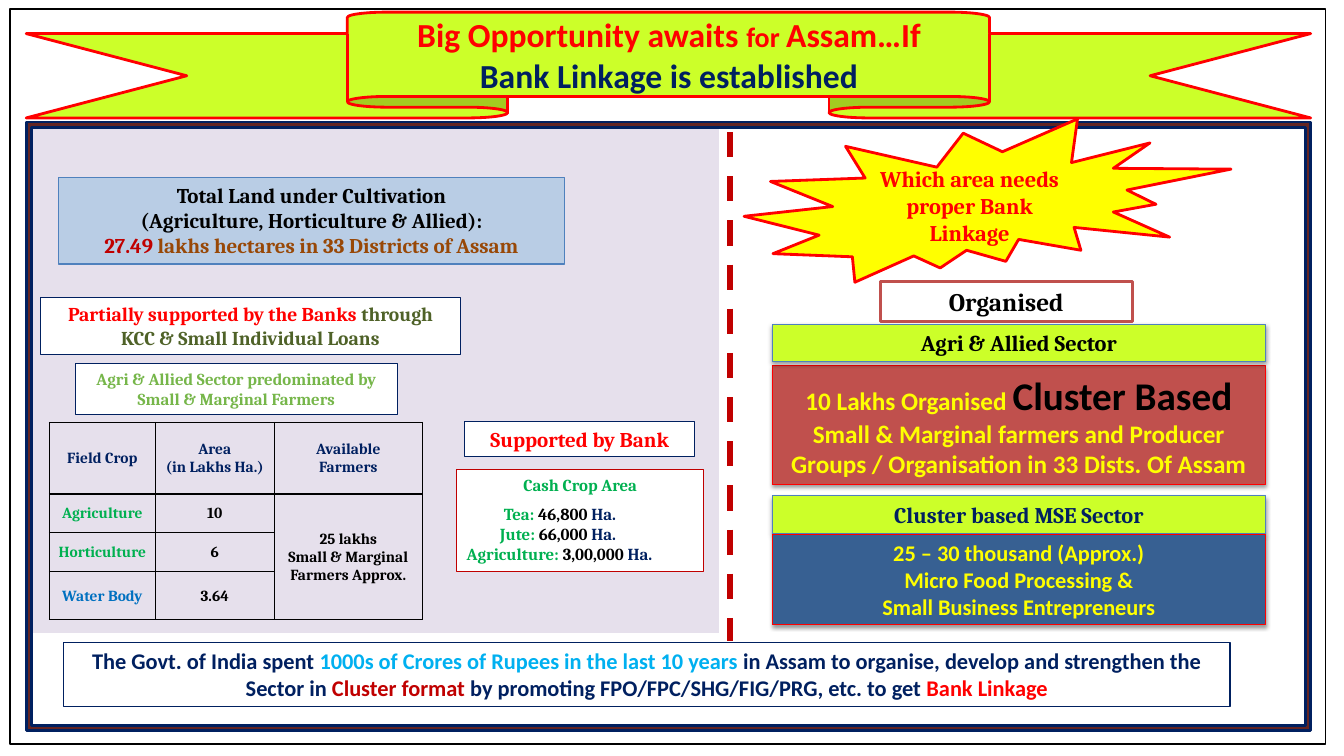
"""Build the slide on bank linkage for farming clusters in Assam."""
from typing import NamedTuple, Optional

from lxml import etree
from pptx import Presentation
from pptx import util as u
from pptx.dml.color import RGBColor
from pptx.enum import dml, shapes, text
from pptx.oxml import ns

BLACK = RGBColor(0x00, 0x00, 0x00)
WHITE = RGBColor(0xFF, 0xFF, 0xFF)
NAVY = RGBColor(0x00, 0x20, 0x60)
RED = RGBColor(0xFF, 0x00, 0x00)
DARK_RED = RGBColor(0xC0, 0x00, 0x00)
BRICK = RGBColor(0xC0, 0x50, 0x4D)
MAROON = RGBColor(0x63, 0x25, 0x23)
BROWN = RGBColor(0x98, 0x48, 0x07)
YELLOW = RGBColor(0xFF, 0xFF, 0x00)
LIME = RGBColor(0xCC, 0xFF, 0x29)
GREEN = RGBColor(0x00, 0xB0, 0x50)
LEAF = RGBColor(0x76, 0xB6, 0x4A)
OLIVE = RGBColor(0x4F, 0x62, 0x28)
LAVENDER = RGBColor(0xE6, 0xE0, 0xEC)
PALE_BLUE = RGBColor(0xB9, 0xCD, 0xE5)
BLUE = RGBColor(0x4F, 0x81, 0xBD)
STEEL = RGBColor(0x37, 0x60, 0x92)
SKY = RGBColor(0x00, 0xB0, 0xF0)
WATER = RGBColor(0x00, 0x70, 0xC0)
CALIBRI, CAMBRIA = "Calibri", "Cambria"
MIDDLE, TOP = text.MSO_ANCHOR.MIDDLE, text.MSO_ANCHOR.TOP
KIND = shapes.MSO_SHAPE


class Span(NamedTuple):
    words: str
    color: RGBColor
    size: Optional[float] = None


class Line(NamedTuple):
    spans: tuple[Span, ...]
    indent: Optional[float] = None
    before: float = 0


class Panel(NamedTuple):
    at: tuple[float, float, float, float]
    fill: Optional[RGBColor] = None
    edge: Optional[RGBColor] = None
    weight: float = 0.75
    lines: tuple[Line, ...] = ()
    size: float = 16
    face: str = CAMBRIA
    raised: bool = False
    kind: KIND = KIND.RECTANGLE
    adjust: tuple[float, ...] = ()


def plain(color: RGBColor, *rows: str) -> tuple[Line, ...]:
    """Return one single-coloured line per row."""
    return tuple(Line((Span(row, color),)) for row in rows)


def crop(name: str, area: str, indent: float, before: float = 0) -> Line:
    """Return a left-aligned line for one cash crop."""
    return Line((Span(name + ": ", GREEN), Span(area + " ", BLACK), Span("Ha.", NAVY)), indent, before)


def apply(target: object, values: dict) -> None:
    """Set each named attribute on the target."""
    for name, value in values.items():
        setattr(target, name, value)


def write(frame, lines: tuple[Line, ...], size: float, face: str) -> None:
    """Fill a text frame with formatted lines."""
    for number, line in enumerate(lines):
        paragraph = frame.add_paragraph() if number else frame.paragraphs[0]
        paragraph.alignment = text.PP_ALIGN.CENTER
        if line.indent is not None:
            paragraph.alignment = text.PP_ALIGN.LEFT
            paragraph._p.get_or_add_pPr().set("marL", str(u.Inches(line.indent)))
        if line.before:
            paragraph.space_before = u.Pt(line.before)
        for span in line.spans:
            run = paragraph.add_run()
            run.text = span.words
            apply(run.font, {"name": face, "size": u.Pt(span.size or size), "bold": True})
            run.font.color.rgb = span.color


def draw_panel(slide, panel: Panel):
    """Draw one panel with its text and return it."""
    shape = slide.shapes.add_shape(panel.kind, *map(u.Inches, panel.at))
    shape.shadow.inherit = False
    for index, value in enumerate(panel.adjust):
        shape.adjustments[index] = value
    if panel.fill is None:
        shape.fill.background()
    else:
        shape.fill.solid()
        shape.fill.fore_color.rgb = panel.fill
    if panel.edge is None:
        shape.line.fill.background()
    else:
        shape.line.color.rgb = panel.edge
        shape.line.width = u.Pt(panel.weight)
    if panel.raised:
        effects = shape.element.spPr.find(ns.qn("a:effectLst"))
        shadow = etree.SubElement(effects, ns.qn("a:outerShdw"), blurRad=str(u.Pt(3.1)),
                                  dist=str(u.Pt(1.6)), dir="5400000", rotWithShape="0")
        tint = etree.SubElement(shadow, ns.qn("a:srgbClr"), val="000000")
        etree.SubElement(tint, ns.qn("a:alpha"), val="38000")
    if panel.lines:
        boxed = panel.kind == KIND.RECTANGLE
        fit = text.MSO_AUTO_SIZE.SHAPE_TO_FIT_TEXT if boxed else text.MSO_AUTO_SIZE.NONE
        apply(shape.text_frame, {"word_wrap": True, "auto_size": fit,
                                 "vertical_anchor": TOP if boxed else MIDDLE,
                                 "margin_top": u.Inches(0.05 if boxed else 0.1)})
        write(shape.text_frame, panel.lines, panel.size, panel.face)
    return shape


def draw_title(slide, ribbon) -> None:
    """Set the title on the front of the ribbon."""
    title = slide.shapes.title
    ribbon.element.addnext(title.element)
    apply(title, dict(zip(("left", "top", "width", "height"), map(u.Inches, (3.45, 0.12, 6.37, 0.84)))))
    apply(title.text_frame, {"word_wrap": True, "vertical_anchor": MIDDLE,
                             "auto_size": text.MSO_AUTO_SIZE.NONE})
    heading = Line((Span("Big Opportunity awaits ", RED), Span("for ", RED, 20), Span("Assam…If", RED)))
    write(title.text_frame, (heading, *plain(NAVY, "Bank Linkage is established")), 24, CALIBRI)


def draw_crops(slide) -> None:
    """Draw the table of field crops."""
    rows = (
        (plain(NAVY, "Field Crop"), plain(NAVY, "Area", "(in Lakhs Ha.)"), plain(NAVY, "Available", "Farmers")),
        (plain(GREEN, "Agriculture"), plain(BLACK, "10"),
         plain(BLACK, "25 lakhs", "Small & Marginal", "Farmers Approx.")),
        (plain(GREEN, "Horticulture"), plain(BLACK, "6"), ()),
        (plain(WATER, "Water Body"), plain(BLACK, "3.64"), ()),
    )
    crops = slide.shapes.add_table(4, 3, *map(u.Inches, (0.49, 4.19, 3.7, 1.96))).table
    for column, width in zip(crops.columns, (1.05, 1.18, 1.47)):
        column.width = u.Inches(width)
    for row, height in zip(crops.rows, (0.71, 0.38, 0.39, 0.48)):
        row.height = u.Inches(height)
    crops.cell(1, 2).merge(crops.cell(3, 2))
    for r, row in enumerate(rows):
        for c, lines in enumerate(row):
            cell = crops.cell(r, c)
            side = u.Inches(0.01)
            apply(cell, {"vertical_anchor": MIDDLE, "margin_left": side, "margin_right": side,
                         "margin_top": side, "margin_bottom": 0})
            write(cell.text_frame, lines, 11, CAMBRIA)
            properties = cell._tc.get_or_add_tcPr()
            for edge in ("a:lnL", "a:lnR", "a:lnT", "a:lnB"):
                border = etree.SubElement(properties, ns.qn(edge), w=str(u.Pt(1)))
                paint = etree.SubElement(border, ns.qn("a:solidFill"))
                etree.SubElement(paint, ns.qn("a:srgbClr"), val="000000")
            cell.fill.background()


def draw_divider(slide) -> None:
    """Draw the dashed line between the two halves."""
    x = u.Inches(7.24)
    divider = slide.shapes.add_connector(shapes.MSO_CONNECTOR.STRAIGHT, x, u.Inches(1.31), x, u.Inches(6.36))
    divider.line.color.rgb = DARK_RED
    apply(divider.line, {"width": u.Pt(4.5), "dash_style": dml.MSO_LINE.DASH})
    etree.SubElement(divider.element.spPr, ns.qn("a:effectLst"))


RIBBON = Panel((0.26, 0.12, 12.74, 1.05), LIME, RED, 2, kind=KIND.UP_RIBBON, adjust=(0.203, 0.5))
BACKDROP = (
    Panel((0.1, 0.09, 13.05, 7.29), None, BLACK, 0.96),
    Panel((0.3, 1.23, 6.83, 5.05), LAVENDER),
    Panel((0.26, 1.21, 12.74, 6.04), MAROON, NAVY, 2, kind=KIND.FRAME, adjust=(0.009,)),
)
PANELS = (
    Panel((0.58, 1.76, 5.02, 0.86), PALE_BLUE, BLUE, size=15, lines=(
        *plain(BLACK, "Total Land under Cultivation", "(Agriculture, Horticulture & Allied):"),
        Line((Span("27.49 ", DARK_RED), Span("lakhs hectares in 33 Districts of Assam", BROWN))))),
    Panel((4.61, 4.18, 2.28, 0.35), WHITE, NAVY, lines=plain(RED, "Supported by Bank"), size=15),
    Panel((7.66, 3.63, 4.89, 1.18), BRICK, RED, size=18, face=CALIBRI, raised=True, lines=(Line((
        Span("10 Lakhs Organised ", YELLOW), Span("Cluster Based", BLACK, 28),
        Span(" Small & Marginal farmers and Producer Groups / Organisation in 33 Dists. Of Assam", YELLOW))),)),
    Panel((4.53, 4.66, 2.45, 1.01), WHITE, DARK_RED, size=12, lines=(
        *plain(GREEN, "Cash Crop Area"), crop("Tea", "46,800", 0.37, 6),
        crop("Jute", "66,000", 0.33), crop("Agriculture", "3,00,000", 0))),
    Panel((0.63, 6.37, 11.57, 0.64), None, NAVY, face=CALIBRI, lines=(Line((
        Span("The Govt. of India spent ", NAVY), Span("1000s of Crores of Rupees in the last 10 years", SKY),
        Span(" in Assam to organise, develop and strengthen the Sector in ", NAVY),
        Span("Cluster format ", DARK_RED), Span("by promoting FPO/FPC/SHG/FIG/PRG, etc. to get ", NAVY),
        Span("Bank Linkage", RED))),)),
    Panel((7.66, 3.22, 4.89, 0.37), LIME, BLUE, lines=plain(BLACK, "Agri & Allied Sector"), raised=True),
    Panel((7.38, 1.18, 4.83, 1.62), YELLOW, RED, 2, plain(RED, "Which area needs proper Bank Linkage"),
          kind=KIND.EXPLOSION2),
    Panel((7.66, 4.92, 4.89, 0.37), LIME, BLUE, lines=plain(NAVY, "Cluster based MSE Sector"), raised=True),
    Panel((7.66, 5.3, 4.89, 0.9), STEEL, RED, face=CALIBRI, raised=True, lines=plain(
        YELLOW, "25 – 30 thousand (Approx.)", "Micro Food Processing &", "Small Business Entrepreneurs")),
    Panel((0.75, 3.61, 3.19, 0.5), WHITE, NAVY, size=12,
          lines=plain(LEAF, "Agri & Allied Sector predominated by Small & Marginal Farmers")),
    Panel((0.4, 2.95, 4.17, 0.57), WHITE, NAVY, size=14, lines=(Line((
        Span("Partially supported by the Banks ", RED), Span("through KCC & Small Individual Loans", OLIVE))),)),
    Panel((8.73, 2.79, 2.5, 0.4), WHITE, BRICK, 2, plain(BLACK, "Organised"), 18),
)


def main() -> None:
    """Build and save the slide."""
    deck = Presentation()
    apply(deck, {"slide_width": u.Inches(13.33), "slide_height": u.Inches(7.5)})
    slide = deck.slides.add_slide(deck.slide_layouts[5])
    for panel in BACKDROP:
        draw_panel(slide, panel)
    draw_title(slide, draw_panel(slide, RIBBON))
    for panel in PANELS:
        draw_panel(slide, panel)
    draw_crops(slide)
    draw_divider(slide)
    deck.save("out.pptx")


if __name__ == "__main__":
    main()
